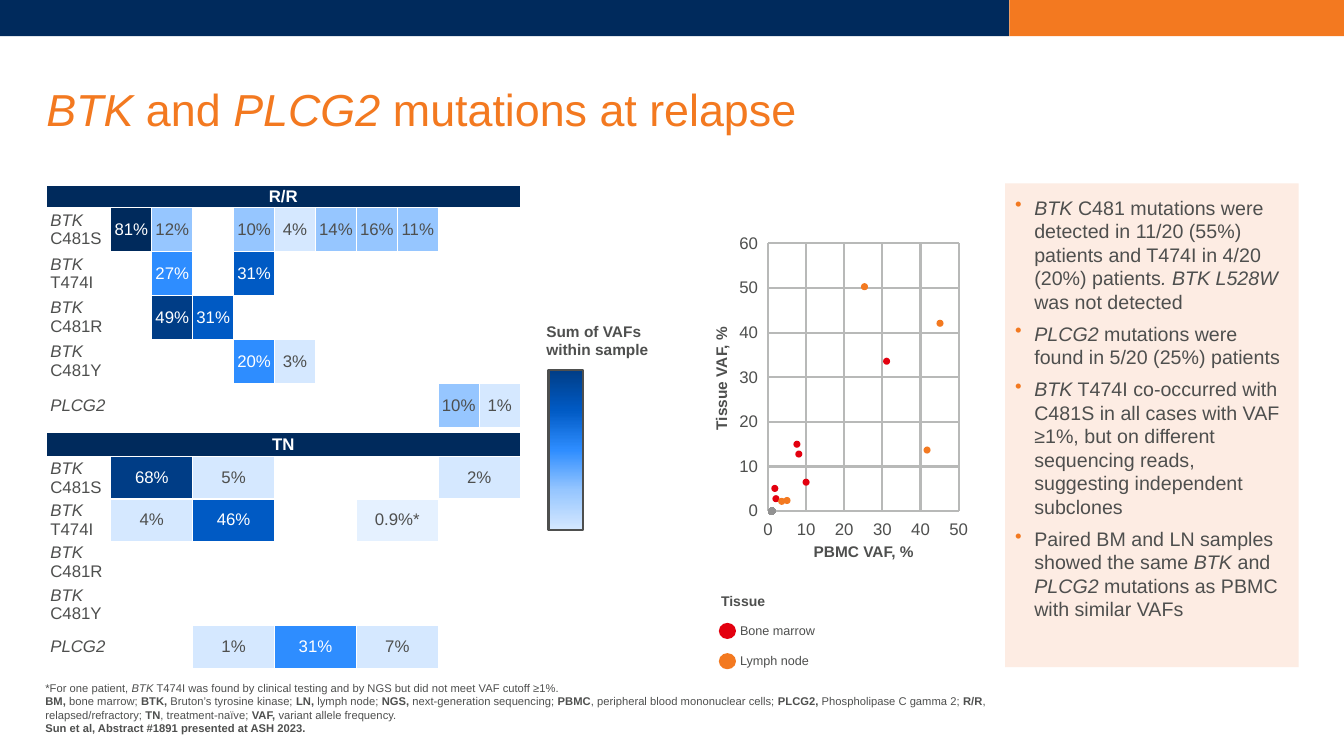
from lxml import etree
from pptx import Presentation
from pptx.chart.data import XyChartData
from pptx.dml.color import RGBColor
from pptx.enum.chart import XL_CHART_TYPE, XL_MARKER_STYLE, XL_TICK_MARK
from pptx.enum.shapes import MSO_SHAPE
from pptx.enum.text import MSO_ANCHOR, PP_ALIGN
from pptx.oxml.ns import qn
from pptx.util import Inches, Pt

FONT = "Arial"
COLORS = {
    "navy": "002A5C", "orange": "F37920", "text": "4E4F4E", "white": "FFFFFF",
    "panel": "FDECE3", "red": "E3000F", "gray": "929292", "grid": "B8B9B8",
    "deep": "003D86", "strong": "005AC4", "mid": "2E8DFF",
    "soft": "96C6FF", "light": "D5E8FF", "faint": "E5F1FF",
}
DARK_SHADES = ("navy", "deep", "strong", "mid")
GRADIENT_SHADES = ("deep", "strong", "mid", "soft", "light")

RR_ROWS = [
    ("|BTK|\nC481S", {1: ("81%", "navy"), 2: ("12%", "soft"), 4: ("10%", "soft"), 5: ("4%", "light"),
                      6: ("14%", "soft"), 7: ("16%", "soft"), 8: ("11%", "soft")}),
    ("|BTK|\nT474I", {2: ("27%", "mid"), 4: ("31%", "strong")}),
    ("|BTK|\nC481R", {2: ("49%", "deep"), 3: ("31%", "strong")}),
    ("|BTK|\nC481Y", {4: ("20%", "mid"), 5: ("3%", "light")}),
    ("|PLCG2|", {9: ("10%", "soft"), 10: ("1%", "light")}),
]
TN_ROWS = [
    ("|BTK|\nC481S", {1: ("68%", "deep"), 2: ("5%", "light"), 5: ("2%", "light")}),
    ("|BTK|\nT474I", {1: ("4%", "light"), 2: ("46%", "strong"), 4: ("0.9%*", "faint")}),
    ("|BTK|\nC481R", {}),
    ("|BTK|\nC481Y", {}),
    ("|PLCG2|", {2: ("1%", "light"), 3: ("31%", "mid"), 4: ("7%", "light")}),
]
TISSUE_VAFS = {
    "red": [(31.1, 33.6), (7.6, 15), (8.1, 12.8), (10, 6.5), (2.1, 2.8), (1.8, 5.1)],
    "orange": [(45.1, 42.1), (25.3, 50.3), (41.7, 13.7), (5, 2.4), (3.6, 2.2)],
}
FINDINGS = [
    "|BTK |C481 mutations were detected in 11/20 (55%) patients and T474I in 4/20 (20%) patients"
    "|. BTK L528W| was not detected",
    "|PLCG2| mutations were found in 5/20 (25%) patients",
    "|BTK| T474I co-occurred with C481S in all cases with VAF ≥1%, but on different sequencing reads, "
    "suggesting independent subclones",
    "Paired BM and LN samples showed the same |BTK| and |PLCG2| mutations as PBMC with similar VAFs",
]
FOOTNOTES = [
    ("*For one patient, |BTK| T474I was found by clinical testing and by NGS but did not meet "
     "VAF cutoff ≥1%.", "italic"),
    ("|BM, |bone marrow; |BTK, |Bruton’s tyrosine kinase; |LN, |lymph node; |NGS, |next-generation "
     "sequencing; |PBMC|, peripheral blood mononuclear cells; |PLCG2, |Phospholipase C gamma 2; "
     "|R/R|, relapsed/refractory; |TN|, treatment-naïve; |VAF, |variant allele frequency.", "bold"),
    ("|Sun et al, Abstract #1891 presented at ASH 2023.|", "bold"),
]


def rgb(color):
    return RGBColor.from_string(COLORS[color])


def assign(target, **values):
    for key, value in values.items():
        setattr(target, key, value)


def set_margins(target, left=0, top=0, right=0, bottom=0):
    assign(target, margin_left=Inches(left), margin_top=Inches(top),
           margin_right=Inches(right), margin_bottom=Inches(bottom))


def write(paragraph, content, size, color="text", emphasis="italic", align=PP_ALIGN.LEFT):
    paragraph.alignment = align
    for part_index, part in enumerate(content.split("|")):
        for line_index, line in enumerate(part.split("\n")):
            if line_index:
                paragraph.add_line_break()
            if line:
                run = paragraph.add_run()
                run.text = line
                assign(run.font, name=FONT, size=Pt(size), **{emphasis: part_index % 2 == 1})
                run.font.color.rgb = rgb(color)


def add_label(shapes, box, lines, size, color="text", anchor=MSO_ANCHOR.MIDDLE,
              align=PP_ALIGN.LEFT, margins=(0, 0, 0, 0)):
    frame = shapes.add_textbox(*map(Inches, box)).text_frame
    assign(frame, word_wrap=True, vertical_anchor=anchor)
    set_margins(frame, *margins)
    for index, (content, emphasis) in enumerate(lines):
        paragraph = frame.add_paragraph() if index else frame.paragraphs[0]
        write(paragraph, content, size, color, emphasis, align)
    return frame


def add_block(shapes, box, color, preset=MSO_SHAPE.RECTANGLE):
    block = shapes.add_shape(preset, *map(Inches, box))
    block.shadow.inherit = False
    block.fill.solid()
    block.fill.fore_color.rgb = rgb(color)
    block.line.fill.background()
    return block


def add_banner(shapes, width, height, split):
    add_block(shapes, (0, 0, split, height), "navy")
    add_block(shapes, (split, 0, width - split, height), "orange")


def add_findings(shapes, box):
    frame = add_block(shapes, box, "panel").text_frame
    assign(frame, word_wrap=True, vertical_anchor=MSO_ANCHOR.TOP)
    set_margins(frame, 0.1, 0.12, 0.1, 0.05)
    for index, finding in enumerate(FINDINGS):
        paragraph = frame.add_paragraph() if index else frame.paragraphs[0]
        properties = paragraph._p.get_or_add_pPr()
        properties.set("marL", str(Inches(0.19)))
        properties.set("indent", str(-Inches(0.19)))
        bullet_color = etree.SubElement(properties, qn("a:buClr"))
        etree.SubElement(bullet_color, qn("a:srgbClr"), val=COLORS["orange"])
        etree.SubElement(properties, qn("a:buChar"), char="•")
        paragraph.space_after = Pt(6)
        write(paragraph, finding, 14)


def fill_cell(cell, content, shade, size=12, align=PP_ALIGN.CENTER, emphasis="italic", left=0):
    set_margins(cell, left)
    cell.vertical_anchor = MSO_ANCHOR.MIDDLE
    for side in ("lnL", "lnR", "lnT", "lnB"):
        border = etree.SubElement(cell._tc.get_or_add_tcPr(), qn(f"a:{side}"), w=str(Pt(1)))
        paint = etree.SubElement(border, qn("a:solidFill"))
        etree.SubElement(paint, qn("a:srgbClr"), val=COLORS["white"])
    cell.fill.solid()
    cell.fill.fore_color.rgb = rgb(shade)
    paragraph = cell.text_frame.paragraphs[0]
    if content:
        write(paragraph, content, size, "white" if shade in DARK_SHADES else "text", emphasis, align)
    else:
        etree.SubElement(paragraph._p, qn("a:endParaRPr"), sz=str(size * 100))


def add_heatmap(shapes, box, heading, rows, patients, header_height, label_width=0.64):
    width, height = box[2:]
    table = shapes.add_table(len(rows) + 1, patients + 1, *map(Inches, box)).table
    assign(table, first_row=False, horz_banding=False)
    for index, column in enumerate(table.columns):
        column.width = Inches((width - label_width) / patients if index else label_width)
    for index, row in enumerate(table.rows):
        row.height = Inches((height - header_height) / len(rows) if index else header_height)
    for index in range(patients + 1):
        fill_cell(table.cell(0, index), "" if index else f"|{heading}|", "navy", emphasis="bold")
    table.cell(0, 0).merge(table.cell(0, patients))
    for row_index, (mutation, vafs) in enumerate(rows, 1):
        fill_cell(table.cell(row_index, 0), mutation, "white", align=PP_ALIGN.LEFT, left=0.04)
        for patient in range(1, patients + 1):
            fill_cell(table.cell(row_index, patient), *vafs.get(patient, ("", "white")))


def add_vaf_scale(shapes, box):
    left, top, width, height = box
    add_label(shapes, (left, top, width, 0.25), [("|Sum of VAFs\nwithin sample|", "bold")], 11,
              margins=(0.1, 0.05, 0.1, 0.05))
    bar = add_block(shapes, (left + 0.12, top + 0.42, 0.34, height - 0.42), "deep")
    bar.fill.gradient()
    bar.fill.gradient_angle = 270
    stops = bar._element.spPr.find(qn("a:gradFill")).find(qn("a:gsLst"))
    for stop in list(stops):
        stops.remove(stop)
    for index, shade in enumerate(GRADIENT_SHADES):
        stop = etree.SubElement(stops, qn("a:gs"), pos=str(index * 25000))
        etree.SubElement(stop, qn("a:srgbClr"), val=COLORS[shade])
    bar.line.color.rgb = rgb("text")
    bar.line.width = Pt(1.5)


def add_scatter(shapes, box):
    left, top, width, height = box
    plot = {"x": 0.168, "y": 0.11, "w": 0.745, "h": 0.779}
    data = XyChartData()
    data.add_series("Series 1").add_data_point(1, 0)
    chart = shapes.add_chart(XL_CHART_TYPE.XY_SCATTER, *map(Inches, box), data).chart
    assign(chart, has_legend=False, has_title=False)
    assign(chart.font, name=FONT, size=Pt(10))
    chart.font.color.rgb = rgb("text")
    maxima = (50, 60)
    for axis, maximum in zip((chart.category_axis, chart.value_axis), maxima):
        assign(axis, minimum_scale=0, maximum_scale=maximum, major_unit=10, has_major_gridlines=True,
               has_title=False, major_tick_mark=XL_TICK_MARK.OUTSIDE, minor_tick_mark=XL_TICK_MARK.NONE)
        axis.format.line.fill.background()
        axis.major_gridlines.format.line.color.rgb = rgb("grid")
        axis.major_gridlines.format.line.width = Pt(1.5)
        assign(axis.tick_labels.font, name=FONT, size=Pt(12))
        axis.tick_labels.font.color.rgb = rgb("text")
    series = chart.plots[0].series[0]
    series.format.line.fill.background()
    assign(series.marker, style=XL_MARKER_STYLE.CIRCLE, size=5)
    for paint in (series.marker.format.fill, series.marker.format.line.fill):
        paint.solid()
        paint.fore_color.rgb = rgb("gray")
    area = chart._chartSpace.chart.plotArea
    for layout in area.findall(qn("c:layout")):
        area.remove(layout)
    layout = etree.Element(qn("c:layout"))
    area.insert(0, layout)
    manual = etree.SubElement(layout, qn("c:manualLayout"))
    settings = {"layoutTarget": "inner", "xMode": "edge", "yMode": "edge", **plot}
    for key, value in settings.items():
        etree.SubElement(manual, qn(f"c:{key}"), val=str(value))

    origin_x, origin_y = left + plot["x"] * width, top + (plot["y"] + plot["h"]) * height
    unit_x, unit_y = plot["w"] * width / maxima[0], plot["h"] * height / maxima[1]
    dot = 0.07
    for color, vafs in TISSUE_VAFS.items():
        for pbmc, tissue in vafs:
            dot_box = (origin_x + pbmc * unit_x - dot / 2, origin_y - tissue * unit_y - dot / 2, dot, dot)
            add_block(shapes, dot_box, color, MSO_SHAPE.OVAL)
    add_label(shapes, (origin_x, top + 3.3, 1.9, 0.25), [("|PBMC VAF, %|", "bold")], 11,
              align=PP_ALIGN.CENTER)
    vertical = add_label(shapes, (left - 0.17, top + 0.38, 0.26, 2.67), [("|Tissue VAF, %|", "bold")], 11,
                         align=PP_ALIGN.CENTER)
    vertical._txBody.bodyPr.set("vert", "vert270")


def add_tissue_key(shapes, left, top):
    add_label(shapes, (left, top, 0.48, 0.25), [("|Tissue|", "bold")], 10, align=PP_ALIGN.CENTER)
    for index, (tissue, color) in enumerate((("Bone marrow", "red"), ("Lymph node", "orange"))):
        row_top = top + 0.29 + index * 0.3
        add_label(shapes, (left + 0.17, row_top, 0.96, 0.25), [(tissue, "bold")], 9,
                  margins=(0.04, 0, 0, 0))
        add_block(shapes, (left, row_top + 0.05, 0.17, 0.16), color, MSO_SHAPE.OVAL)


def main():
    deck = Presentation()
    assign(deck, slide_width=Inches(13.33), slide_height=Inches(7.5))
    shapes = deck.slides.add_slide(deck.slide_layouts[6]).shapes
    add_banner(shapes, 13.33, 0.36, 10.01)
    title = add_label(shapes, (0.46, 0.63, 12.43, 0.97),
                      [("|BTK| and |PLCG2| mutations at relapse", "italic")], 32, "orange")
    title.paragraphs[0].line_spacing = 0.9
    add_label(shapes, (0.45, 6.76, 9.33, 0.53), FOOTNOTES, 8, anchor=MSO_ANCHOR.BOTTOM)
    add_findings(shapes, (9.97, 1.82, 2.91, 4.8))
    add_scatter(shapes.add_group_shape().shapes, (7.19, 2.04, 2.54, 3.41))
    add_tissue_key(shapes.add_group_shape().shapes, 7.13, 5.84)
    add_heatmap(shapes, (0.46, 1.84, 4.7, 2.4), "R/R", RR_ROWS, 10, 0.22)
    add_heatmap(shapes, (0.46, 4.29, 4.7, 2.34), "TN", TN_ROWS, 5, 0.24)
    add_vaf_scale(shapes.add_group_shape().shapes, (5.32, 3.25, 1.26, 2.01))
    deck.save("out.pptx")


if __name__ == "__main__":
    main()
